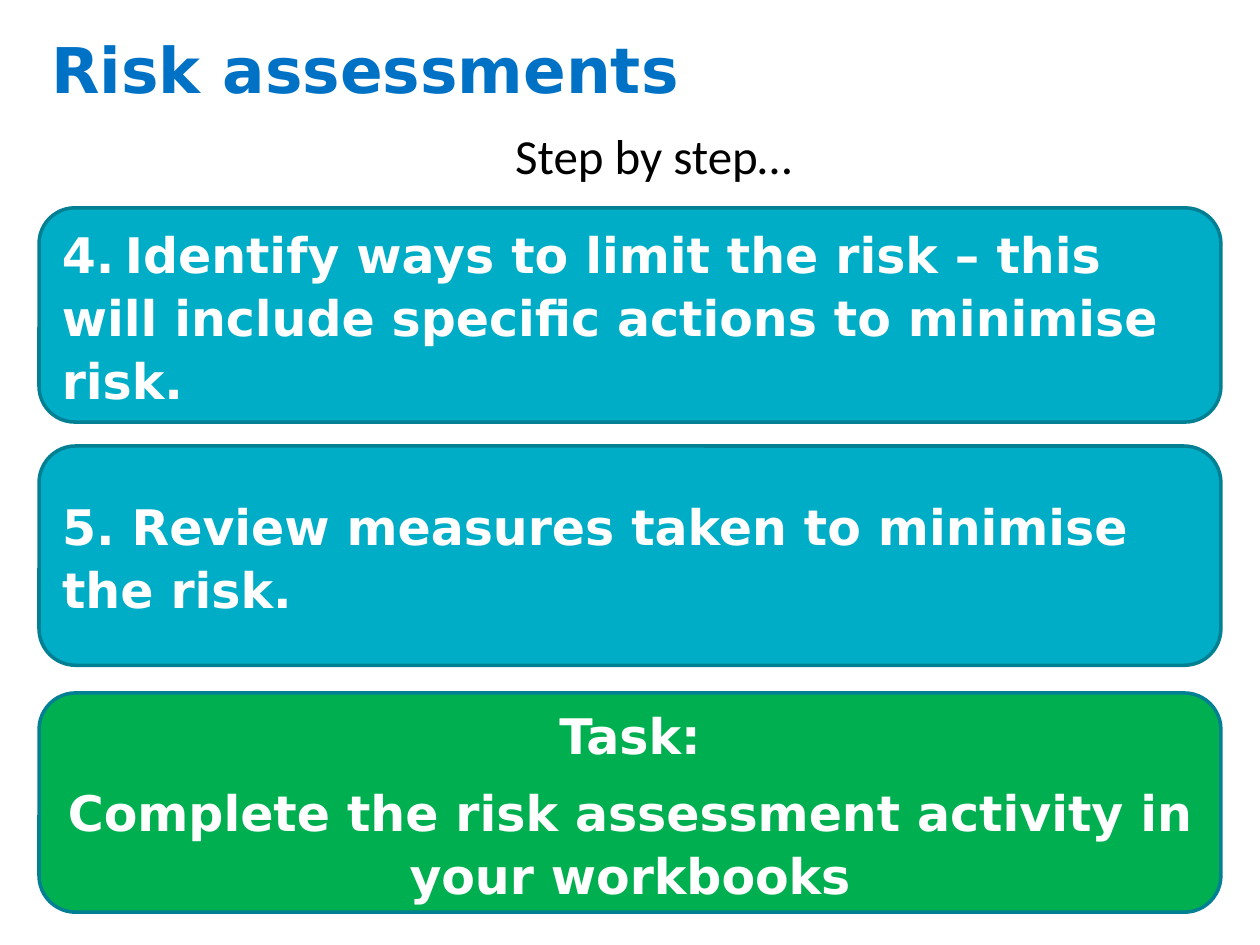
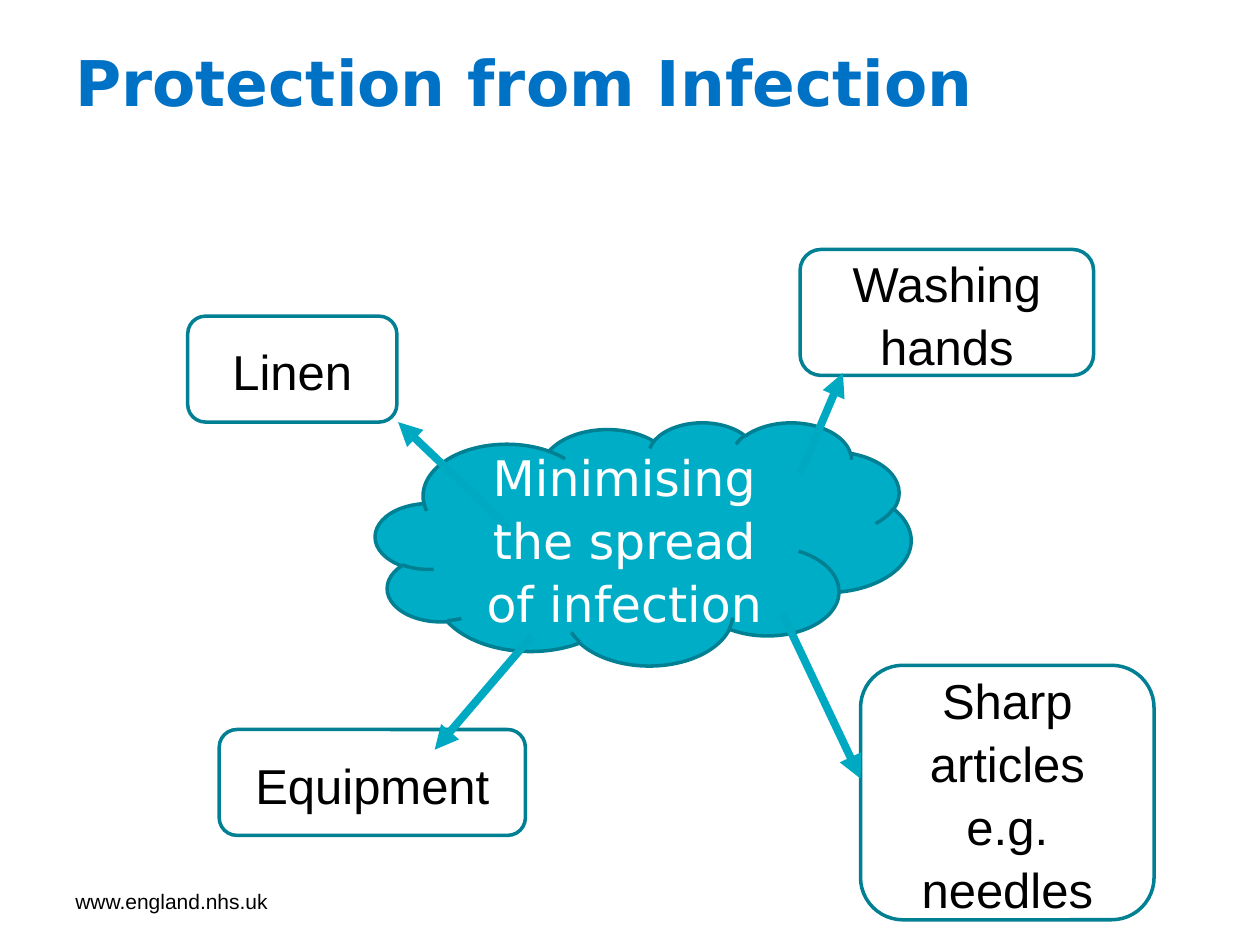
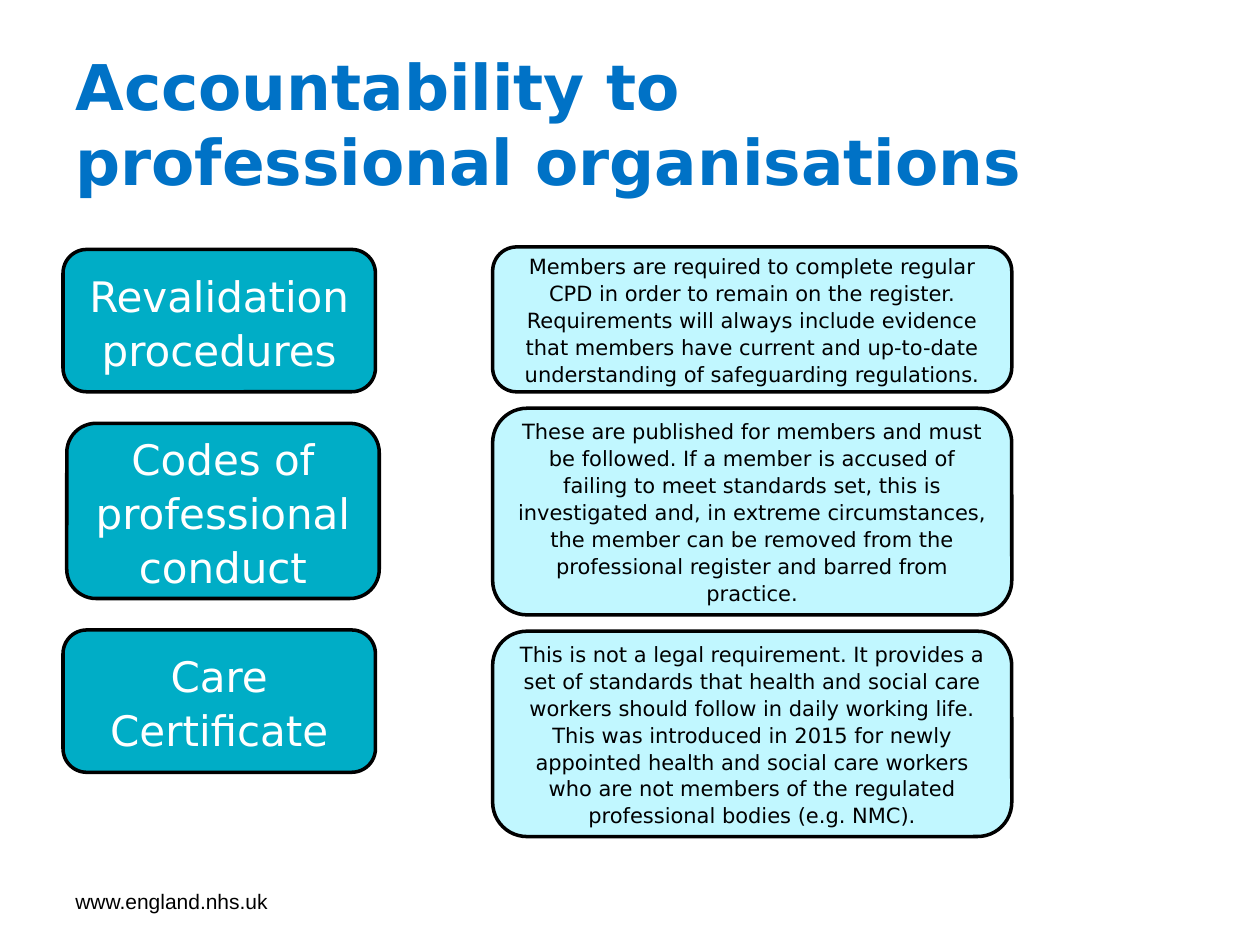
from lxml import etree
from pptx import Presentation
from pptx.dml.color import RGBColor
from pptx.enum.shapes import MSO_CONNECTOR, MSO_SHAPE
from pptx.enum.text import MSO_ANCHOR, PP_ALIGN
from pptx.oxml.ns import qn
from pptx.util import Inches, Pt

ROUNDED, CLOUD = MSO_SHAPE.ROUNDED_RECTANGLE, MSO_SHAPE.CLOUD
STRAIGHT = MSO_CONNECTOR.STRAIGHT
LEFT, CENTER = PP_ALIGN.LEFT, PP_ALIGN.CENTER
TOP, MIDDLE = MSO_ANCHOR.TOP, MSO_ANCHOR.MIDDLE

BLUE, TEAL, DARK_TEAL, ARROW_TEAL = "0072C6", "00ADC6", "008092", "00A9C2"
GREEN, PALE, BLACK, WHITE = "00B050", "C1F7FF", "000000", "FFFFFF"
HEADING_FONT, BODY_FONT, SUBTITLE_FONT = "DejaVu Sans", "Arial", "Calibri"

FOOTER = "www.england.nhs.uk"

# Risk assessments: full-width bands as (top, height, fill, alignment, paragraphs)
STEP_LEFT, STEP_WIDTH = 0.31, 9.38
STEPS = [
    (1.65, 1.7, TEAL, LEFT,
     ["4.\tIdentify ways to limit the risk – this will include specific actions to minimise risk."]),
    (3.54, 1.74, TEAL, LEFT, ["5. Review measures taken to minimise the risk."]),
    (5.5, 1.74, GREEN, CENTER,
     ["Task:", "Complete the risk assessment activity in your workbooks"]),
]

# Protection from Infection: precautions as (text, box, arrow start, arrow end)
HUB = ("Minimising the spread of infection", (2.98, 3.35, 4.25, 1.93))
PRECAUTIONS = [
    ("Washing hands", (6.35, 1.98, 2.33, 1), (6.35, 3.76), (6.69, 2.96)),
    ("Sharp articles e.g. needles", (6.83, 5.28, 2.33, 2.02), (6.21, 4.87), (6.83, 6.18)),
    ("Linen", (1.49, 2.51, 1.66, 0.84), (4.04, 4.19), (3.16, 3.35)),
    ("Equipment", (1.74, 5.79, 2.43, 0.84), (4.22, 5.05), (3.45, 5.95)),
]

# Accountability: (term, term box, explanation, explanation top, explanation height)
TERM_WIDTH = 2.48
EXPLANATION_LEFT, EXPLANATION_WIDTH = 3.91, 4.12
ORGANISATIONS = [
    ("Revalidation procedures", (0.5, 1.98, TERM_WIDTH, 1.13),
     "Members are required to complete regular CPD in order to remain on the register. "
     "Requirements will always include evidence that members have current and up-to-date "
     "understanding of safeguarding regulations.", 1.96, 1.15),
    ("Codes of professional conduct", (0.53, 3.36, TERM_WIDTH, 1.39),
     "These are published for members and must be followed. If a member is accused of "
     "failing to meet standards set, this is investigated and, in extreme circumstances, "
     "the member can be removed from the professional register and barred from practice.",
     3.24, 1.64),
    ("Care Certificate", (0.5, 5, TERM_WIDTH, 1.13),
     "This is not a legal requirement. It provides a set of standards that health and "
     "social care workers should follow in daily working life. This was introduced in 2015 "
     "for newly appointed health and social care workers who are not members of the "
     "regulated professional bodies (e.g. NMC).", 5.01, 1.63),
]


def rgb(value):
    return RGBColor.from_string(value)


def write(shape, paragraphs, size=28, font=HEADING_FONT, color=BLACK, bold=False,
          align=CENTER, anchor=MIDDLE, spacing=1.07, after=8):
    frame = shape.text_frame
    frame.word_wrap = True
    frame.vertical_anchor = anchor
    for index, text in enumerate(paragraphs):
        paragraph = frame.paragraphs[0] if index == 0 else frame.add_paragraph()
        paragraph.alignment = align
        paragraph.line_spacing = spacing
        paragraph.space_after = Pt(after)
        if "\t" in text:
            tabs = etree.SubElement(paragraph._p.get_or_add_pPr(), qn("a:tabLst"))
            etree.SubElement(tabs, qn("a:tab"), pos=str(Inches(0.5)), algn="l")
        run = paragraph.add_run()
        run.text = text
        run.font.size = Pt(size)
        run.font.name = font
        run.font.bold = bold
        run.font.color.rgb = rgb(color)


def add_label(slide, text, box, **text_format):
    label = slide.shapes.add_textbox(*map(Inches, box))
    write(label, [text], **text_format)


def add_box(slide, paragraphs, box, fill=None, line=DARK_TEAL, kind=ROUNDED, **text_format):
    shape = slide.shapes.add_shape(kind, *map(Inches, box))
    shape.shadow.inherit = False
    if fill:
        shape.fill.solid()
        shape.fill.fore_color.rgb = rgb(fill)
    else:
        shape.fill.background()
    shape.line.color.rgb = rgb(line)
    shape.line.width = Pt(2)
    write(shape, paragraphs, **text_format)


def add_arrow(slide, start, end):
    arrow = slide.shapes.add_connector(STRAIGHT, *map(Inches, start + end))
    arrow.line.color.rgb = rgb(ARROW_TEAL)
    arrow.line.width = Pt(4.5)
    etree.SubElement(arrow.line._get_or_add_ln(), qn("a:tailEnd"), type="triangle")
    etree.SubElement(arrow._element.spPr, qn("a:effectLst"))


def add_slide(deck, title, left, top):
    """Add a blank slide with the shared footer and title style."""
    slide = deck.slides.add_slide(deck.slide_layouts[6])
    add_label(slide, FOOTER, (0.5, 6.95, 2.33, 0.4), size=12, font=BODY_FONT,
              align=LEFT, spacing=1.0, after=0)
    add_label(slide, title, (left, top, 8.44, 0.73), size=36, color=BLUE, bold=True,
              align=LEFT, spacing=1.0, after=0)
    return slide


def build_risk(deck):
    slide = add_slide(deck, "Risk assessments", 0.31, 0.18)
    add_label(slide, "Step by step…", (0.59, 0.88, 9.19, 0.61), font=SUBTITLE_FONT,
              anchor=TOP, spacing=1.15)
    for top, height, fill, align, paragraphs in STEPS:
        add_box(slide, paragraphs, (STEP_LEFT, top, STEP_WIDTH, height), fill=fill,
                color=WHITE, bold=True, align=align)


def build_infection(deck):
    slide = add_slide(deck, "Protection from Infection", 0.5, 0.28)
    hub_text, hub_box = HUB
    add_box(slide, [hub_text], hub_box, fill=TEAL, kind=CLOUD, color=WHITE)
    for text, box, start, end in PRECAUTIONS:
        add_box(slide, [text], box, font=BODY_FONT)
        add_arrow(slide, start, end)


def build_accountability(deck):
    slide = add_slide(deck, "Accountability to professional organisations", 0.5, 0.61)
    for term, term_box, explanation, top, height in ORGANISATIONS:
        add_box(slide, [term], term_box, fill=TEAL, line=BLACK, size=24, color=WHITE, after=0)
        add_box(slide, [explanation], (EXPLANATION_LEFT, top, EXPLANATION_WIDTH, height),
                fill=PALE, line=BLACK, size=12, after=0)


def main():
    deck = Presentation()
    deck.slide_width, deck.slide_height = Inches(10), Inches(7.5)
    build_risk(deck)
    build_infection(deck)
    build_accountability(deck)
    deck.save("out.pptx")


if __name__ == "__main__":
    main()
